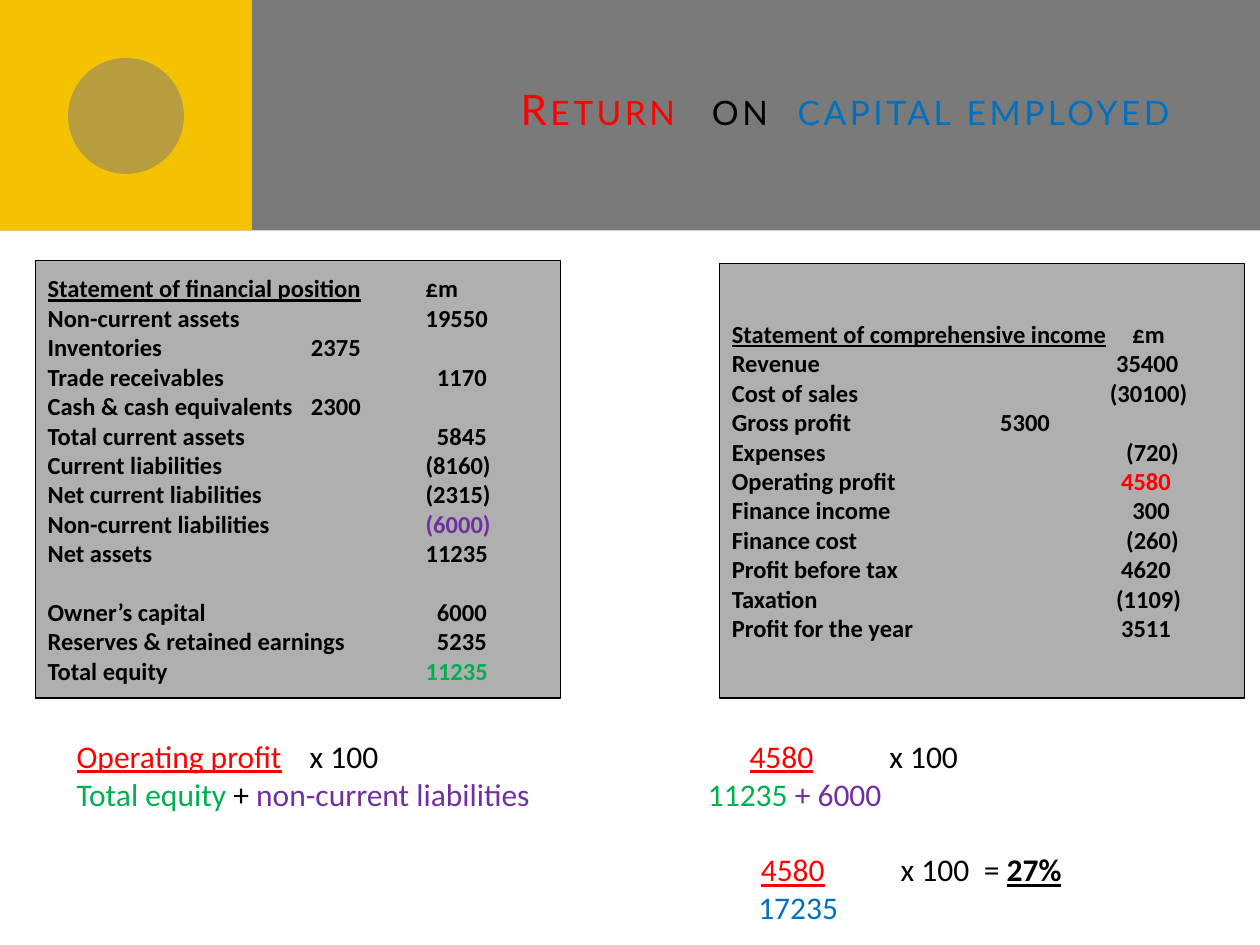
from dataclasses import dataclass

from lxml import etree
from pptx import Presentation
from pptx.dml.color import RGBColor
from pptx.enum.shapes import MSO_SHAPE
from pptx.enum.text import MSO_ANCHOR, PP_ALIGN
from pptx.oxml.ns import qn
from pptx.util import Inches, Pt


@dataclass(frozen=True)
class Theme:
    font: str = "Calibri"
    title_font: str = "Lato"
    title_size: int = 24
    statement_size: int = 14
    formula_size: int = 18
    black: str = "000000"
    band: str = "7A7A7A"
    accent: str = "F5C201"
    panel: str = "AFAFAF"
    red: str = "FF0000"
    green: str = "00B050"
    purple: str = "7030A0"
    blue: str = "0070C0"


class SlideBuilder:
    def __init__(self, slide, theme):
        self.slide = slide
        self.theme = theme

    def add_shape(self, kind, box, fill, line=None, opacity=None):
        shape = self.slide.shapes.add_shape(kind, *map(Inches, box))
        shape.shadow.inherit = False
        shape.fill.solid()
        shape.fill.fore_color.rgb = RGBColor.from_string(fill)
        if opacity is not None:
            color = shape.fill._xPr.find(".//" + qn("a:srgbClr"))
            etree.SubElement(color, qn("a:alpha"), val=str(opacity * 1000))
        if line:
            shape.line.color.rgb = RGBColor.from_string(line)
            shape.line.width = Pt(0.75)
        else:
            shape.line.fill.background()
        return shape

    def add_text_box(self, box):
        text_box = self.slide.shapes.add_textbox(*map(Inches, box))
        text_box.text_frame.word_wrap = True
        return text_box.text_frame

    def add_paragraph(self, frame, first, tabs=(), space_before=0):
        paragraph = frame.paragraphs[0] if first else frame.add_paragraph()
        paragraph.alignment = PP_ALIGN.LEFT
        if space_before:
            paragraph.space_before = Pt(space_before)
        if tabs:
            properties = paragraph._p.get_or_add_pPr()
            tab_list = etree.SubElement(properties, qn("a:tabLst"))
            for tab in tabs:
                etree.SubElement(tab_list, qn("a:tab"), pos=str(Inches(tab)), algn="l")
        return paragraph

    def add_run(self, paragraph, text, size, color=None, bold=False,
                underline=False, font=None):
        run = paragraph.add_run()
        run.text = text
        run.font.name = font or self.theme.font
        run.font.size = Pt(size)
        run.font.bold = bold
        run.font.underline = underline
        run.font.color.rgb = RGBColor.from_string(color or self.theme.black)
        return run

    def add_title(self, box, parts):
        frame = self.add_text_box(box)
        frame.vertical_anchor = MSO_ANCHOR.MIDDLE
        frame.margin_bottom = Inches(0.45)
        paragraph = self.add_paragraph(frame, True)
        paragraph.alignment = PP_ALIGN.RIGHT
        for text, color in parts:
            run = self.add_run(paragraph, text, self.theme.title_size, color,
                               font=self.theme.title_font)
            properties = run.font._element
            properties.set("cap", "small")
            properties.set("spc", "200")

    def add_statement(self, box, heading, unit_tab, rows):
        theme = self.theme
        panel = self.add_shape(MSO_SHAPE.RECTANGLE, box, theme.panel, theme.black)
        frame = panel.text_frame
        frame.word_wrap = True
        frame.vertical_anchor = MSO_ANCHOR.MIDDLE
        size = theme.statement_size
        paragraph = self.add_paragraph(frame, True, [unit_tab])
        self.add_run(paragraph, heading, size, bold=True, underline=True)
        self.add_run(paragraph, "\t£m", size, bold=True)
        for label, value, tab, color, gap in rows:
            paragraph = self.add_paragraph(frame, False, [tab], gap)
            self.add_run(paragraph, label + "\t", size, bold=True)
            self.add_run(paragraph, value, size, color, bold=True)

    def add_formulas(self, box, lines):
        frame = self.add_text_box(box)
        for index, (tabs, gap, runs) in enumerate(lines):
            paragraph = self.add_paragraph(frame, index == 0, tabs, gap)
            for text, color, *style in runs:
                self.add_run(paragraph, text, self.theme.formula_size, color,
                             bold="bold" in style, underline="underline" in style)


def main():
    presentation = Presentation()
    presentation.slide_width = Inches(10)
    presentation.slide_height = Inches(7.5)
    theme = Theme()
    slide = presentation.slides.add_slide(presentation.slide_layouts[6])
    builder = SlideBuilder(slide, theme)

    # Header band
    builder.add_shape(MSO_SHAPE.RECTANGLE, (0, 0, 10, 1.83), theme.band)
    builder.add_shape(MSO_SHAPE.RECTANGLE, (0, 0, 2, 1.83), theme.accent)
    builder.add_shape(MSO_SHAPE.OVAL, (0.54, 0.46, 0.92, 0.92), theme.band, opacity=50)

    # Statements: label, value, tab position, value colour, space before
    builder.add_statement((0.28, 2.07, 4.17, 3.47), "Statement of financial position", 3, [
        ("Non-current assets", "19550", 3, None, 0),
        ("Inventories", "2375", 2.09, None, 0),
        ("Trade receivables", "1170", 3.09, None, 0),
        ("Cash & cash equivalents", "2300", 2.09, None, 0),
        ("Total current assets", "5845", 3.09, None, 0),
        ("Current liabilities", "(8160)", 3, None, 0),
        ("Net current liabilities", "(2315)", 3, None, 0),
        ("Non-current liabilities", "(6000)", 3, theme.purple, 0),
        ("Net assets", "11235", 3, None, 0),
        ("Owner’s capital", "6000", 3.09, None, 16.8),
        ("Reserves & retained earnings", "5235", 3.09, None, 0),
        ("Total equity", "11235", 3, theme.green, 0),
    ])
    builder.add_statement((5.71, 2.09, 4.17, 3.45), "Statement of comprehensive income", 3.18, [
        ("Revenue", "35400", 3.05, None, 0),
        ("Cost of sales", "(30100)", 3, None, 0),
        ("Gross profit", "5300", 2.13, None, 0),
        ("Expenses", "(720)", 3.13, None, 0),
        ("Operating profit", "4580", 3.09, theme.red, 0),
        ("Finance income", "300", 3.18, None, 0),
        ("Finance cost", "(260)", 3.13, None, 0),
        ("Profit before tax", "4620", 3.09, None, 0),
        ("Taxation", "(1109)", 3.05, None, 0),
        ("Profit for the year", "3511", 3.09, None, 0),
    ])

    # Ratio formulas: tab positions, space before, runs
    builder.add_formulas((0.51, 5.8, 9.21, 1.7), [
        ((1.85, 5.34, 6.45), 0, [
            ("Operating profit", theme.red, "underline"), ("\tx 100\t", theme.black),
            ("4580", theme.red, "underline"), ("\tx 100", theme.black)]),
        ((5.01,), 0, [
            ("Total equity ", theme.green), ("+ ", theme.black),
            ("non-current liabilities\t", theme.purple),
            ("11235 ", theme.green), ("+ 6000", theme.purple)]),
        ((5.43, 6.54, 7.2), 21.6, [
            ("\t", theme.black), ("4580", theme.red, "underline"),
            ("\tx 100\t= ", theme.black), ("27%", theme.black, "bold", "underline")]),
        ((5.41,), 0, [("\t", theme.black), ("17235", theme.blue)]),
    ])

    # Title
    builder.add_title((1.87, 0.44, 7.96, 1.25), [
        ("Return", theme.red), (" on ", theme.black), ("capital employed", theme.blue)])

    presentation.save("out.pptx")


if __name__ == "__main__":
    main()
